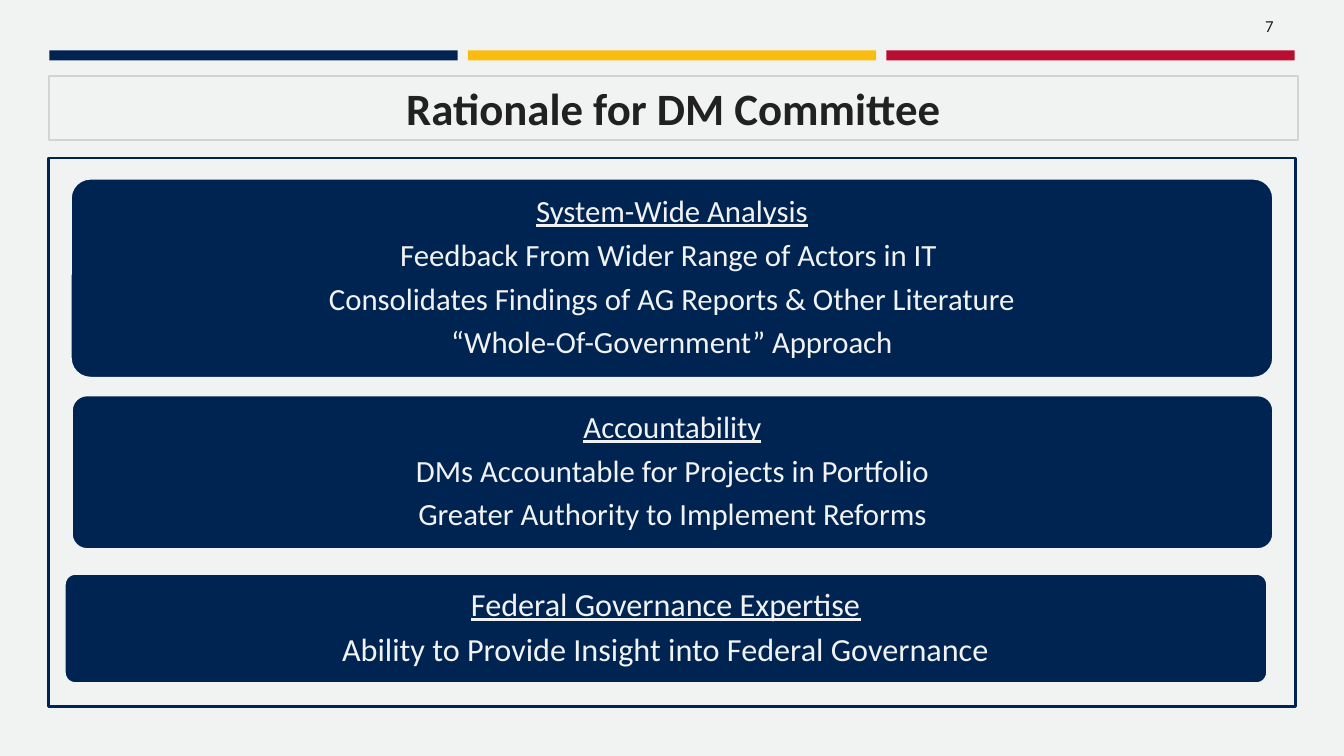
import pptx
import pptx.dml.color
import pptx.enum.shapes
import pptx.enum.text
import pptx.util

NAVY, GOLD, RED = "002452", "FABD0F", "B90E31"
PALE, INK, GREY = "F1F2F2", "212121", "D1D3D4"
MARGIN = 0.49
RECTANGLE = pptx.enum.shapes.MSO_SHAPE.RECTANGLE
ROUNDED = pptx.enum.shapes.MSO_SHAPE.ROUNDED_RECTANGLE
CENTER = pptx.enum.text.PP_ALIGN.CENTER
LEFT = pptx.enum.text.PP_ALIGN.LEFT
MIDDLE = pptx.enum.text.MSO_ANCHOR.MIDDLE

REASONS = [
    ((0.7, 1.77, 11.93, 1.98), 22, [
        "System-Wide Analysis",
        "Feedback From Wider Range of Actors in IT ",
        "Consolidates Findings of AG Reports & Other Literature",
        "“Whole-Of-Government” Approach",
    ]),
    ((0.71, 3.92, 11.92, 1.53), 22, [
        "Accountability",
        "DMs Accountable for Projects in Portfolio",
        "Greater Authority to Implement Reforms",
    ]),
    ((0.64, 5.69, 11.93, 1.09), 23, [
        "Federal Governance Expertise",
        "Ability to Provide Insight into Federal Governance",
    ]),
]


def paint(color_format, color):
    """Set a colour format from a hex string."""
    color_format.rgb = pptx.dml.color.RGBColor.from_string(color)


def inches(box):
    """Turn a box of numbers into lengths."""
    return [pptx.util.Inches(length) for length in box]


def add_panel(slide, box, kind=RECTANGLE, fill=None, line=None, width=1.75):
    """Add a flat preset shape with optional fill and outline."""
    shape = slide.shapes.add_shape(kind, *inches(box))
    shape.shadow.inherit = False
    if fill:
        shape.fill.solid()
        paint(shape.fill.fore_color, fill)
    else:
        shape.fill.background()
    if line:
        paint(shape.line.color, line)
        shape.line.width = pptx.util.Pt(width)
    else:
        shape.line.fill.background()
    return shape


def write_paragraph(paragraph, text, size, color, bold=False, underline=False,
                    align=CENTER, line_spacing=1.0, space_after=0):
    """Write one formatted run into a paragraph."""
    paragraph.alignment = align
    paragraph.line_spacing = line_spacing
    paragraph.space_after = pptx.util.Pt(space_after)
    run = paragraph.add_run()
    run.text = text
    run.font.name = "Calibri"
    run.font.size = pptx.util.Pt(size)
    run.font.bold = bold
    run.font.underline = underline
    paint(run.font.color, color)


def add_color_bars(slide, box, gap=0.1):
    """Divide the box into three equal bars."""
    left, top, width, height = box
    bar_width = (width - 2 * gap) / 3
    for column, color in enumerate((NAVY, GOLD, RED)):
        bar_left = left + column * (bar_width + gap)
        add_panel(slide, (bar_left, top, bar_width, height), fill=color)


def add_title(slide, box, text):
    """Add the outlined title strip."""
    strip = add_panel(slide, box, line=GREY, width=1.5)
    strip.text_frame.word_wrap = True
    strip.text_frame.vertical_anchor = MIDDLE
    write_paragraph(strip.text_frame.paragraphs[0], text, 32, INK, bold=True)


def add_page_number(slide, box, number):
    """Add the page number in the top corner."""
    frame = slide.shapes.add_textbox(*inches(box)).text_frame
    frame.word_wrap = True
    write_paragraph(frame.paragraphs[0], str(number), 12, INK, align=LEFT)


def add_reason(slide, box, size, lines):
    """Add a rounded card with an underlined heading above its points."""
    card = add_panel(slide, box, ROUNDED, NAVY, PALE)
    card.adjustments[0] = 0.1
    frame = card.text_frame
    frame.word_wrap = True
    frame.vertical_anchor = MIDDLE
    for index, text in enumerate(lines):
        paragraph = frame.add_paragraph() if index else frame.paragraphs[0]
        write_paragraph(paragraph, text, size, PALE, underline=index == 0,
                        line_spacing=0.9, space_after=0.34 * size)


def build_rationale_slide(presentation):
    """Add the slide that gives the reasons for the committee."""
    slide = presentation.slides.add_slide(presentation.slide_layouts[6])
    slide.background.fill.solid()
    paint(slide.background.fill.fore_color, PALE)
    add_color_bars(slide, (MARGIN, 0.5, 12.35, 0.1))
    add_panel(slide, (0.48, 1.57, 12.37, 5.44), fill=PALE, line=NAVY)
    add_title(slide, (MARGIN, 0.75, 12.38, 0.64), "Rationale for DM Committee")
    add_page_number(slide, (12.45, 0.11, 0.36, 0.3), 7)
    for box, size, lines in REASONS:
        add_reason(slide, box, size, lines)


def main():
    """Build and save the presentation."""
    presentation = pptx.Presentation()
    presentation.slide_width = pptx.util.Inches(13.33)
    presentation.slide_height = pptx.util.Inches(7.5)
    build_rationale_slide(presentation)
    presentation.save("out.pptx")


if __name__ == "__main__":
    main()
